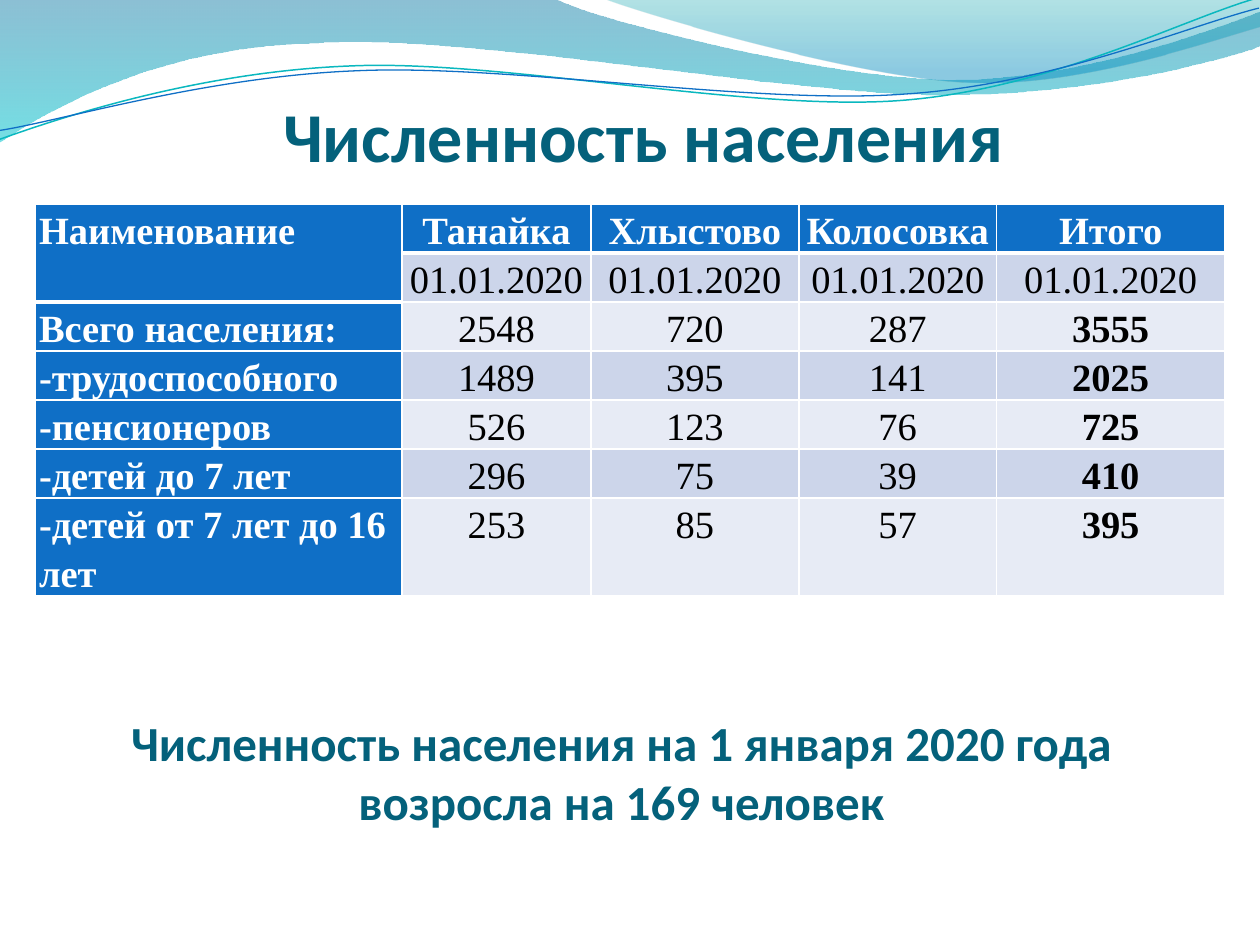
from lxml import etree
from pptx import Presentation
from pptx import util as u
from pptx.dml.color import RGBColor
from pptx.enum import text
from pptx.oxml import ns

PX = 9144
COLORS = {
    "white": "FFFFFF", "black": "000000", "title": "04617B", "blue": "0F6FC6",
    "band": "CCD5EA", "light": "E7EBF5", "teal": "0AB8BF",
    "deep": "0074A1", "cyan": "00C6CF", "sea": "00A1A9", "sky": "008BBF",
}
CENTER = text.PP_ALIGN.CENTER


def write(frame, words, font="Calibri", size=28, color="title", bold=True,
          align=CENTER, spacing=None, anchor=None, top_inset=None):
    frame.word_wrap = True
    if anchor is not None:
        frame.auto_size = text.MSO_AUTO_SIZE.NONE
        frame.vertical_anchor = anchor
        frame.margin_left = frame.margin_right = frame.margin_bottom = 0
        frame.margin_top = top_inset * PX
    para = frame.paragraphs[0]
    para.alignment = align
    para.line_spacing = spacing
    span = para.add_run()
    span.text = words
    span.font.name = font
    span.font.size = u.Pt(size)
    span.font.bold = bold
    span.font.color.rgb = RGBColor.from_string(COLORS[color])


def draw_curve(shapes, start, segments, closed):
    builder = shapes.build_freeform(*start, scale=PX)
    for segment in segments:
        builder.add_line_segments(list(zip(segment[::2], segment[1::2])), close=False)
    if closed:
        builder.add_line_segments([start], close=True)
    shape = builder.convert_to_shape()
    shape.shadow.inherit = False
    lines = iter(list(shape.element.iter(ns.qn("a:lnTo"))))
    for segment in segments:
        pieces = [next(lines) for _ in segment[::2]]
        if len(pieces) == 3:
            curve = etree.Element(ns.qn("a:cubicBezTo"))
            pieces[0].addprevious(curve)
            for piece in pieces:
                curve.append(piece[0])
                piece.getparent().remove(piece)
    return shape


deck = Presentation()
deck.slide_width = 1000 * PX
deck.slide_height = 750 * PX
slide = deck.slides.add_slide(deck.slide_layouts[5])

waves = [
    ((0, 0), [(440, -1), (476, 17, 664, 63, 758, 63), (853, 63, 958, 26, 1000, 9),
              (1001, 36), (983, 44, 870, 76, 746, 75), (622, 75, 382, 28, 257, 34),
              (129, 36, 46, 83, -1, 113)],
     [(0, "deep", 45), (1, "cyan", 55)]),
    ((479, -1), [(509, 11, 682, 62, 769, 65), (856, 69, 961, 32, 1000, 21), (1000, 0)],
     [(0, "sea", 30), (0.8, "sky", 45)]),
]
for start, segments, stops in waves:
    wave = draw_curve(slide.shapes, start, segments, True)
    wave.line.fill.background()
    wave.fill.gradient()
    wave.fill.gradient_angle = 270
    for stop, (position, color, opacity) in zip(wave.fill.gradient_stops, stops):
        stop.position = position
        stop.color.rgb = RGBColor.from_string(COLORS[color])
    for tint, (position, color, opacity) in zip(wave.element.iter(ns.qn("a:srgbClr")), stops):
        etree.SubElement(tint, ns.qn("a:alpha"), val=str(opacity * 1000))

strands = [
    ((-2, 87), [(47, 72, 158, 41, 278, 42), (396, 42, 591, 93, 712, 90),
                (832, 87, 940, 36, 1000, 22)], "teal", 0.85),
    ((-2, 80), [(46, 75, 164, 45, 283, 46), (403, 46, 596, 88, 716, 85),
                (835, 83, 942, 42, 1001, 30)], "blue", 0.75),
]
strand_group = slide.shapes.add_group_shape()
for start, segments, color, width in strands:
    strand = draw_curve(strand_group.shapes, start, segments, False)
    strand.rotation = 357.3
    strand.fill.background()
    strand.line.color.rgb = RGBColor.from_string(COLORS[color])
    strand.line.width = u.Pt(width)

title = slide.shapes.title
title.left, title.top, title.width, title.height = (n * PX for n in (43, 517, 900, 142))
write(title.text_frame, "Численность населения на 1 января 2020 года возросла на 169 человек",
      anchor=text.MSO_ANCHOR.BOTTOM, top_inset=5)

rows = [
    ["Наименование", "Танайка", "Хлыстово", "Колосовка", "Итого"],
    [""] + ["01.01.2020"] * 4,
    ["Всего населения:", "2548", "720", "287", "3555"],
    ["-трудоспособного", "1489", "395", "141", "2025"],
    ["-пенсионеров", "526", "123", "76", "725"],
    ["-детей до 7 лет", "296", "75", "39", "410"],
    ["-детей от 7 лет до 16 лет", "253", "85", "57", "395"],
]
table_frame = slide.shapes.add_table(7, 5, 28 * PX, 162 * PX, 945 * PX, 337 * PX)
table = table_frame.table
for column, width in zip(table.columns, [291, 150, 165, 157, 181]):
    column.width = width * PX
for row, height in zip(table.rows, [19, 20, 23, 23, 23, 23, 37]):
    row.height = height * PX
table_frame.height = 337 * PX
table.cell(0, 0).merge(table.cell(1, 0))

for r, values in enumerate(rows):
    for c, value in enumerate(values):
        cell = table.cell(r, c)
        cell.margin_left = cell.margin_right = 3 * PX
        cell.margin_top = cell.margin_bottom = 0
        header = r == 0 or c == 0
        properties = cell._tc.get_or_add_tcPr()
        for side in "LRTB":
            heavy = r == 0 and side == "B"
            border = etree.SubElement(properties, ns.qn("a:ln" + side),
                                      w=str(u.Pt(3 if heavy else 1)))
            paint = etree.SubElement(border, ns.qn("a:solidFill"))
            etree.SubElement(paint, ns.qn("a:srgbClr"), val=COLORS["white"])
        cell.fill.solid()
        fill = "blue" if header else "band" if r % 2 else "light"
        cell.fill.fore_color.rgb = RGBColor.from_string(COLORS[fill])
        if value:
            write(cell.text_frame, value, font="Times New Roman", size=22,
                  color="white" if header else "black", bold=header or (c == 4 and r > 1),
                  align=text.PP_ALIGN.LEFT if c == 0 else CENTER, spacing=1.15)

heading = slide.shapes.add_textbox(67 * PX, 94 * PX, 900 * PX, 46 * PX)
write(heading.text_frame, "Численность населения ", size=40,
      anchor=text.MSO_ANCHOR.BOTTOM, top_inset=5)

deck.save("out.pptx")
